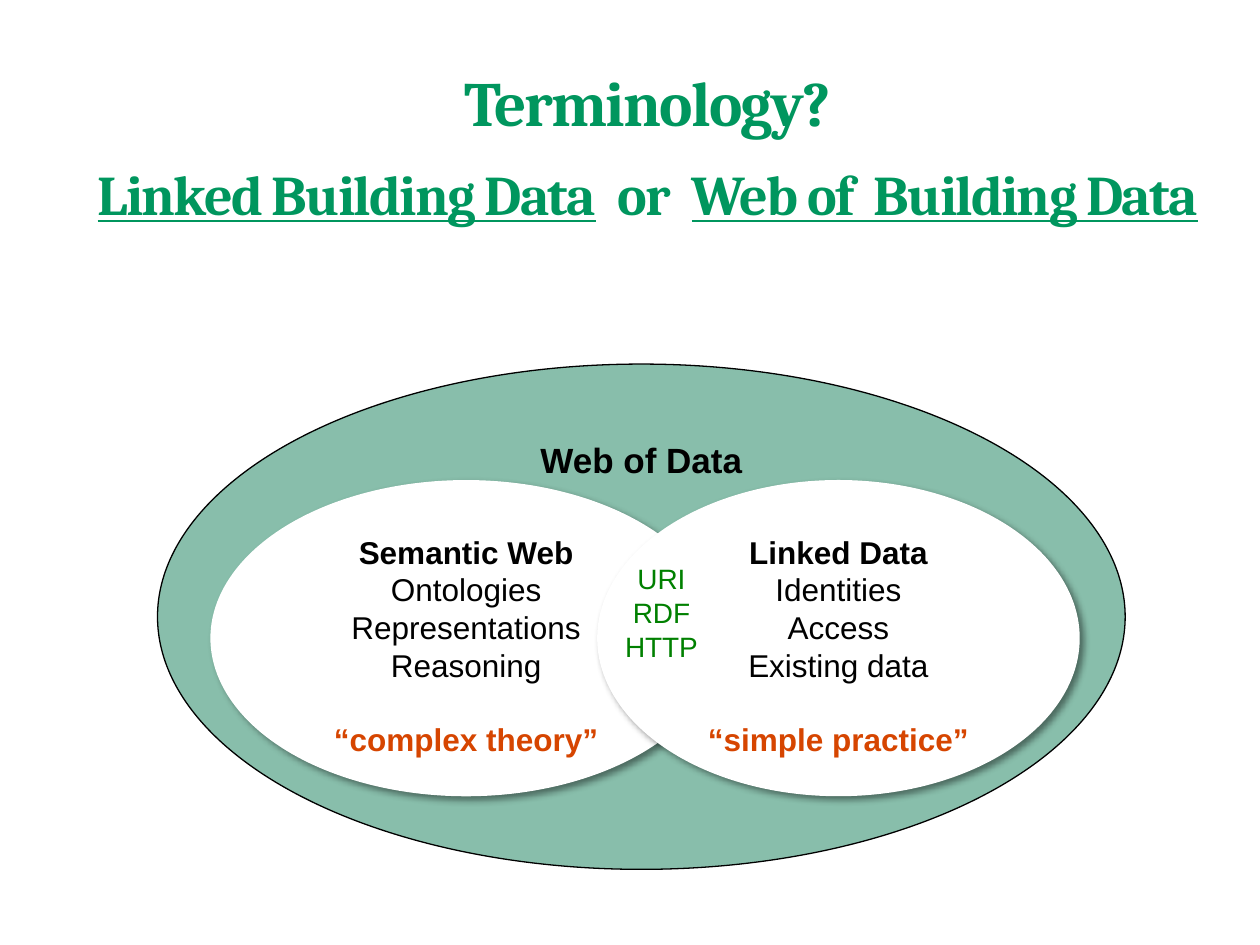
from lxml import etree
from pptx import Presentation
from pptx.dml.color import RGBColor
from pptx.enum.shapes import MSO_SHAPE
from pptx.enum.text import MSO_ANCHOR, MSO_AUTO_SIZE, PP_ALIGN
from pptx.oxml.ns import qn
from pptx.util import Inches, Pt

OVAL, ROUNDED = MSO_SHAPE.OVAL, MSO_SHAPE.ROUNDED_RECTANGLE
TOP, MIDDLE = MSO_ANCHOR.TOP, MSO_ANCHOR.MIDDLE
CENTER = PP_ALIGN.CENTER
NO_AUTOFIT = MSO_AUTO_SIZE.NONE

COLORS = {
    "title": "00965E",
    "web": "88BEAB",
    "topic": "FFFFFF",
    "text": "000000",
    "quote": "D64500",
    "shared": "008000",
}
TITLE_AREA = (3.3, 8, 96.2, 17.47)
DIAGRAM_AREA = (12.5, 38.53, 76.8, 53.47)
TOPICS = [
    ((5.47, 22.94, 52.86, 62.59), "Semantic Web",
     ["Ontologies", "Representations", "Reasoning"], "“complex theory”"),
    ((45.44, 22.94, 49.87, 62.59), "Linked Data",
     ["Identities", "Access", "Existing data"], "“simple practice”"),
]
SHARED_AREA = (42.84, 37.16, 18.49, 23.94)


def within(box, percents):
    """Return the part of a box given as percentages of its width and height."""
    left, top, width, height = box
    x, y, w, h = (share / 100 for share in percents)
    return (round(left + x * width), round(top + y * height),
            round(w * width), round(h * height))


def color(name):
    """Return a named palette colour."""
    return RGBColor.from_string(COLORS[name])


def prepare_frame(frame, anchor=TOP, inset=None):
    """Set wrapping, anchoring and margins of a text frame."""
    frame.word_wrap = True
    frame.auto_size = NO_AUTOFIT
    frame.vertical_anchor = anchor
    if inset is not None:
        frame.margin_left = frame.margin_right = inset
        frame.margin_top = frame.margin_bottom = inset


def write(frame, *pieces, size, font="Arial", ink="text", bold=False,
          before=0, leading=None, spacing=None):
    """Write one centred paragraph of (text, underlined) pieces."""
    paragraph = frame.paragraphs[0]
    if paragraph.runs:
        paragraph = frame.add_paragraph()
    paragraph.alignment = CENTER
    paragraph.space_before = Pt(before)
    paragraph.line_spacing = leading
    for text, underlined in pieces:
        run = paragraph.add_run()
        run.text = text
        run.font.name, run.font.size = font, Pt(size)
        run.font.bold, run.font.underline = bold, underlined
        run.font.color.rgb = color(ink)
        if spacing is not None:
            run.font._element.set("spc", str(round(spacing * 100)))


def add_region(slide, preset, box, fill=None, outline=None):
    """Add a flat shape with optional fill and outline."""
    region = slide.shapes.add_shape(preset, *box)
    region.shadow.inherit = False
    if fill:
        region.fill.solid()
        region.fill.fore_color.rgb = color(fill)
    else:
        region.fill.background()
    if outline:
        region.line.color.rgb = color(outline)
        region.line.width = Pt(0.75)
    else:
        region.line.fill.background()
    return region


def cast_shadow(region):
    """Give a region a soft shadow towards the lower right."""
    effects = region._element.spPr.find(qn("a:effectLst"))
    shadow = etree.SubElement(effects, qn("a:outerShdw"), blurRad=str(Pt(4)),
                              dist=str(Pt(3)), dir=str(45 * 60000),
                              algn="tl", rotWithShape="0")
    tint = etree.SubElement(shadow, qn("a:srgbClr"), val=COLORS["text"])
    etree.SubElement(tint, qn("a:alpha"), val="43000")


def place_title(slide, box):
    """Place the question and the two competing terms."""
    title = slide.shapes.title
    title.left, title.top, title.width, title.height = box
    frame = title.text_frame
    prepare_frame(frame, inset=0)
    style = dict(font="Cambria", ink="title", bold=True, leading=0.85, spacing=-1)
    write(frame, ("Terminology?", False), size=36, **style)
    write(frame, ("Linked Building Data", True), ("  or  ", False),
          ("Web of  Building Data", True), size=32, before=17, **style)


def place_topic(slide, box, heading, aspects, quote):
    """Place one inner ellipse with heading, aspects and quote."""
    topic = add_region(slide, OVAL, box, fill="topic")
    cast_shadow(topic)
    frame = topic.text_frame
    prepare_frame(frame)
    write(frame, (heading, False), size=18, bold=True)
    for aspect in aspects:
        write(frame, (aspect, False), size=18)
    write(frame, (quote, False), size=18, ink="quote", bold=True, before=21)


def place_shared(slide, box):
    """Place the standards that both topics share."""
    frame = add_region(slide, ROUNDED, box).text_frame
    prepare_frame(frame, anchor=MIDDLE)
    for standard in ("URI", "RDF", "HTTP"):
        write(frame, (standard, False), size=16, ink="shared")


def place_diagram(slide, box):
    """Place the Web of Data with its two overlapping topics."""
    web = add_region(slide, OVAL, box, fill="web", outline="text")
    prepare_frame(web.text_frame, inset=0)
    write(web.text_frame, ("Web of Data", False), size=20, bold=True)
    for area, heading, aspects, quote in TOPICS:
        place_topic(slide, within(box, area), heading, aspects, quote)
    place_shared(slide, within(box, SHARED_AREA))


def main():
    """Build and save the slide."""
    deck = Presentation()
    deck.slide_width, deck.slide_height = Inches(10), Inches(7.5)
    slide = deck.slides.add_slide(deck.slide_layouts[5])
    page = (0, 0, deck.slide_width, deck.slide_height)
    place_title(slide, within(page, TITLE_AREA))
    place_diagram(slide, within(page, DIAGRAM_AREA))
    deck.save("out.pptx")


if __name__ == "__main__":
    main()
